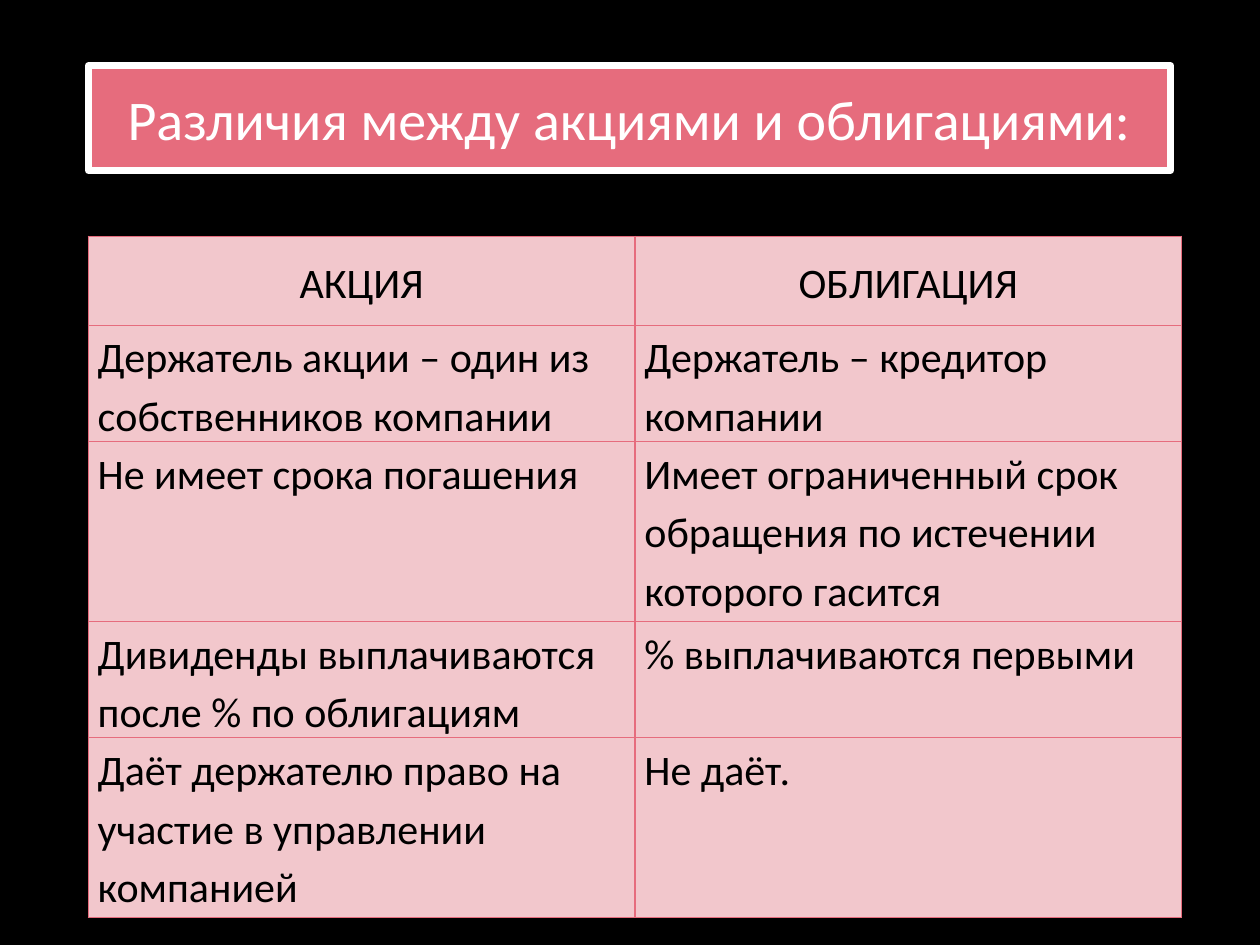
from lxml.etree import SubElement
from pptx import Presentation
from pptx.dml.color import RGBColor as RGB
from pptx.enum.text import MSO_ANCHOR as Anchor, MSO_AUTO_SIZE as AutoSize, PP_ALIGN as Align
from pptx.oxml.ns import qn
from pptx.util import Cm, Pt

COLORS = {"back": "000000", "title": "E66C7D", "cell": "F2C7CC", "white": "FFFFFF", "text": "000000"}
ROWS = [
    ("АКЦИЯ", "ОБЛИГАЦИЯ"),
    ("Держатель акции – один из собственников компании", "Держатель – кредитор компании"),
    ("Не имеет срока погашения", "Имеет ограниченный срок обращения по истечении которого гасится"),
    ("Дивиденды выплачиваются после % по облигациям", "% выплачиваются первыми"),
    ("Даёт держателю право на участие в управлении компанией", "Не даёт."),
]
ROW_HEIGHTS = [1.8, 2.34, 3.63, 2.34, 3.63]
COL_WIDTH = 11.02


def set_attrs(obj, values):
    for name, value in values.items():
        setattr(obj, name, value)


class Deck:
    font = "Calibri"

    def __init__(self, width, height):
        self.prs = Presentation()
        set_attrs(self.prs, {"slide_width": Cm(width), "slide_height": Cm(height)})

    def color(self, name):
        return RGB.from_string(COLORS[name])

    def fill(self, obj, name):
        obj.fill.solid()
        obj.fill.fore_color.rgb = self.color(name)

    def add_slide(self):
        self.slide = self.prs.slides.add_slide(self.prs.slide_layouts[5])
        self.fill(self.slide.background, "back")

    def text(self, tf, text, size, color, **para):
        p = tf.paragraphs[0]
        set_attrs(p, para)
        r = p.add_run()
        r.text = text
        set_attrs(r.font, {"name": self.font, "size": Pt(size), "bold": False})
        r.font.color.rgb = self.color(color)

    def title(self, text, left, top, width, height):
        sp = self.slide.shapes.title
        set_attrs(sp, {"left": Cm(left), "top": Cm(top), "width": Cm(width), "height": Cm(height)})
        self.fill(sp, "title")
        sp.line.width = Pt(3.75)
        sp.line.color.rgb = self.color("white")
        SubElement(sp.line._get_or_add_ln(), qn("a:round"))
        tf = sp.text_frame
        set_attrs(tf, {"word_wrap": True, "auto_size": AutoSize.SHAPE_TO_FIT_TEXT,
                       "vertical_anchor": Anchor.MIDDLE})
        self.text(tf, text, 32, "white", alignment=Align.CENTER)

    def borders(self, cell):
        tc_pr = cell._tc.get_or_add_tcPr()
        for i, side in enumerate(("lnL", "lnR", "lnT", "lnB")):
            ln = tc_pr.makeelement(qn(f"a:{side}"), {"w": str(Pt(0.79))})
            fill = SubElement(ln, qn("a:solidFill"))
            SubElement(fill, qn("a:srgbClr"), val=COLORS["title"])
            tc_pr.insert(i, ln)

    def table(self, rows, heights, col_width, left, top):
        n = len(rows[0])
        frame = self.slide.shapes.add_table(
            len(rows), n, Cm(left), Cm(top), Cm(n * col_width), Cm(sum(heights)))
        tbl = frame.table
        set_attrs(tbl, {"first_row": False, "horz_banding": False})
        for col in tbl.columns:
            col.width = Cm(col_width)
        for i, (row, height) in enumerate(zip(rows, heights)):
            tbl.rows[i].height = Cm(height)
            header = i == 0
            for j, text in enumerate(row):
                cell = tbl.cell(i, j)
                set_attrs(cell, {
                    "margin_left": Cm(0.19), "margin_right": Cm(0.19),
                    "margin_top": 0, "margin_bottom": 0,
                    "vertical_anchor": Anchor.MIDDLE if header else Anchor.TOP})
                self.fill(cell, "cell")
                self.borders(cell)
                self.text(cell.text_frame, text, 24, "text", line_spacing=1.15,
                          alignment=Align.CENTER if header else Align.LEFT)


def main():
    deck = Deck(25.4, 19.05)
    deck.add_slide()
    deck.title("Различия между акциями и облигациями:", 1.78, 1.57, 21.82, 1.62)
    deck.table(ROWS, ROW_HEIGHTS, COL_WIDTH, 1.78, 4.76)
    deck.prs.save("out.pptx")


if __name__ == "__main__":
    main()
